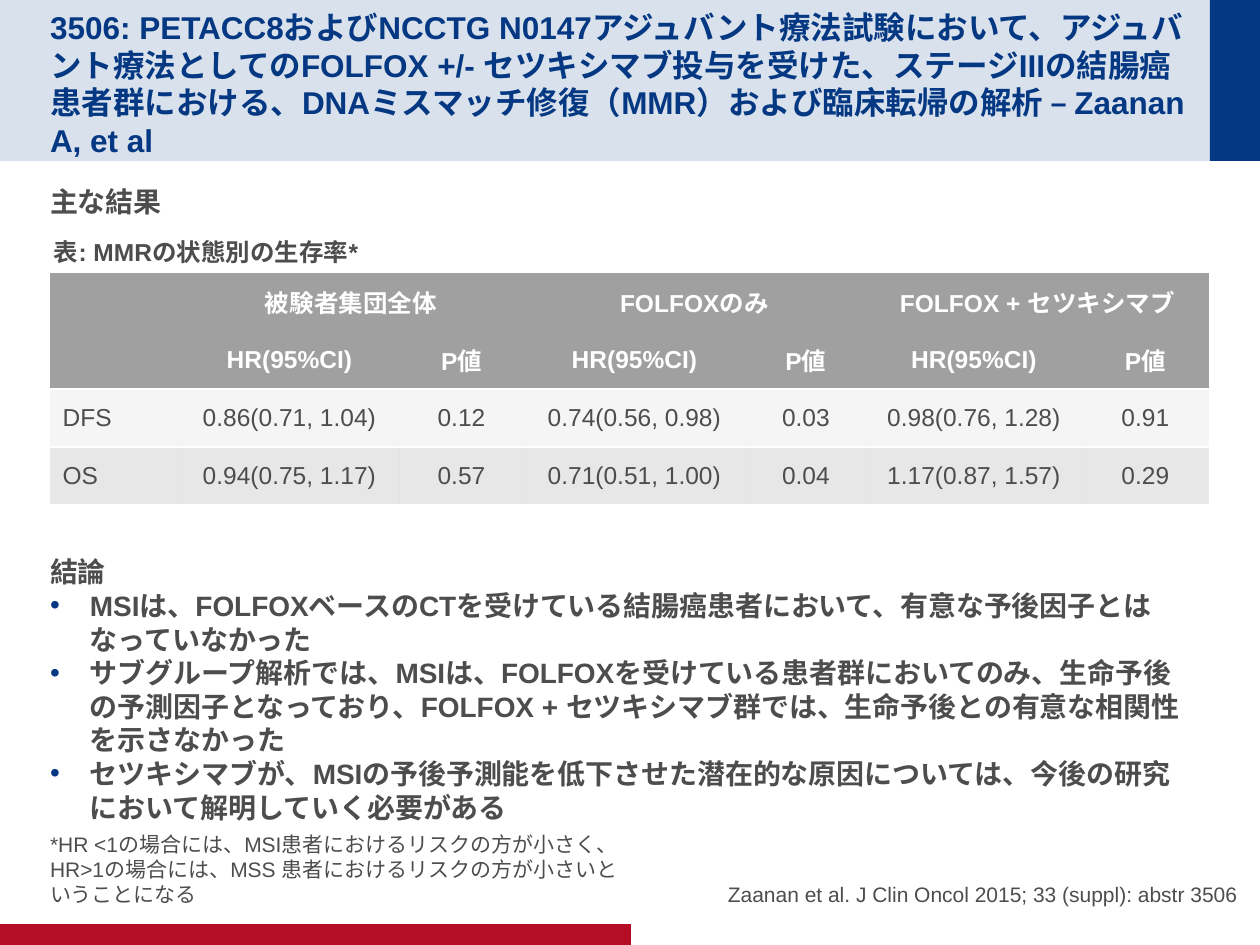
"""Build the MMR survival results slide with its table and conclusions."""
from dataclasses import dataclass

from lxml.etree import SubElement
from pptx import Presentation
from pptx.dml.color import RGBColor
from pptx.enum.shapes import MSO_SHAPE
from pptx.enum.text import MSO_ANCHOR, MSO_AUTO_SIZE, PP_ALIGN
from pptx.oxml import parse_xml
from pptx.oxml.ns import nsdecls, qn
from pptx.util import Pt


@dataclass(frozen=True)
class Theme:
    font: str = "Arial"
    navy: str = "043882"
    red: str = "B60D27"
    ink: str = "4D4D4D"
    grey: str = "A0A0A0"
    white: str = "FFFFFF"
    title: int = 18
    body: int = 16
    table: int = 14
    note: int = 12


THEME = Theme()
TITLE = (
    "3506: PETACC8およびNCCTG N0147アジュバント療法試験において、"
    "アジュバント療法としてのFOLFOX +/- セツキシマブ投与を受けた、"
    "ステージIIIの結腸癌患者群における、DNAミスマッチ修復（MMR）"
    "および臨床転帰の解析 – Zaanan A, et al"
)
RESULT = "主な結果"
CAPTION = "表: MMRの状態別の生存率*"
CLOSE = "結論"
POINTS = [
    "MSIは、FOLFOXベースのCTを受けている結腸癌患者において、有意な予後因子とはなっていなかった",
    "サブグループ解析では、MSIは、FOLFOXを受けている患者群においてのみ、生命予後の予測因子となっており、"
    "FOLFOX + セツキシマブ群では、生命予後との有意な相関性を示さなかった",
    "セツキシマブが、MSIの予後予測能を低下させた潜在的な原因については、今後の研究において解明していく必要がある",
]
NOTE = (
    "*HR <1の場合には、MSI患者におけるリスクの方が小さく、"
    "HR>1の場合には、MSS 患者におけるリスクの方が小さいということになる"
)
CITE = "Zaanan et al. J Clin Oncol 2015; 33 (suppl): abstr 3506"
GROUPS = ["被験者集団全体", "FOLFOXのみ", "FOLFOX + セツキシマブ"]
HEADS = ["HR(95%CI)", "P値"]
ROWS = [
    ("DFS", "0.86(0.71, 1.04)", "0.12", "0.74(0.56, 0.98)", "0.03", "0.98(0.76, 1.28)", "0.91"),
    ("OS", "0.94(0.75, 1.17)", "0.57", "0.71(0.51, 1.00)", "0.04", "1.17(0.87, 1.57)", "0.29"),
]
COLS = [129, 221, 123, 223, 120, 216, 127]
ROW = 58
SHADES = [100, 100, 10, 25]
BANDS = [
    ((0, 0, 1260, 161), THEME.navy, 15),
    ((1210, 0, 50, 161), THEME.navy, 100),
    ((0, 924, 631, 21), THEME.red, 100),
]
PLAIN = "{2D5ABB26-0587-4C30-8999-92F81FD0307C}"


def px(num):
    return round(num * 914400 / 126)


def paint(fill, node, color, alpha):
    fill.solid()
    fill.fore_color.rgb = RGBColor.from_string(color)
    if alpha < 100:
        tone = next(node.iter(qn("a:srgbClr")))
        SubElement(tone, qn("a:alpha"), val=str(alpha * 1000))


def style(para, size, color=THEME.ink, bold=False, align=PP_ALIGN.LEFT):
    para.alignment = align
    para.space_before = Pt(0)
    for run in para.runs:
        font = run.font
        font.name, font.size, font.bold = THEME.font, Pt(size), bold
        font.color.rgb = RGBColor.from_string(color)


def mark(para, on):
    props = para._p.get_or_add_pPr()
    inset = px(40) if on else 0
    props.set("marL", str(inset))
    props.set("indent", str(-inset))
    if on:
        tint = SubElement(props, qn("a:buClr"))
        SubElement(tint, qn("a:srgbClr"), val=THEME.navy)
        SubElement(props, qn("a:buFont"), typeface=THEME.font)
        SubElement(props, qn("a:buChar"), char="•")
    else:
        SubElement(props, qn("a:buNone"))


def place(shape, box, lines, anchor, **look):
    shape.left, shape.top, shape.width, shape.height = map(px, box)
    frame = shape.text_frame
    frame.text = "\n".join(lines)
    frame.word_wrap = True
    frame.auto_size = MSO_AUTO_SIZE.NONE
    frame.vertical_anchor = anchor
    frame.margin_left = frame.margin_right = 0
    frame.margin_top = frame.margin_bottom = 0
    for para in frame.paragraphs:
        style(para, **look)
        mark(para, para.text in POINTS)


def add_bands(slide):
    tree = slide.shapes.element
    for spot, (box, color, alpha) in enumerate(BANDS, 2):
        band = slide.shapes.add_shape(MSO_SHAPE.RECTANGLE, *map(px, box))
        band.shadow.inherit = False
        band.line.fill.background()
        paint(band.fill, band.element.spPr, color, alpha)
        tree.insert(spot, band.element)


def add_grid(slide):
    pairs = [text for group in GROUPS for text in (group, "")]
    data = [["", *pairs], ["", *HEADS * len(GROUPS)], *ROWS]
    frame = slide.shapes.add_table(
        len(data), len(COLS), px(50), px(273), px(sum(COLS)), px(ROW * len(data))
    )
    table = frame.table
    next(frame.element.iter(qn("a:tableStyleId"))).text = PLAIN
    for col, width in zip(table.columns, COLS):
        col.width = px(width)
    for r, line in enumerate(data):
        table.rows[r].height = px(ROW)
        head = r < 2
        for c, text in enumerate(line):
            cell = table.cell(r, c)
            cell.text = text
            cell.vertical_anchor = MSO_ANCHOR.MIDDLE
            style(
                cell.text_frame.paragraphs[0], THEME.table,
                THEME.white if head else THEME.ink, head,
                PP_ALIGN.CENTER if c else PP_ALIGN.LEFT,
            )
            props = cell._tc.get_or_add_tcPr()
            paint(cell.fill, props, THEME.grey, SHADES[r])
            if r:
                props.insert(0, parse_xml(
                    f'<a:lnB {nsdecls("a")} w="12700"><a:solidFill>'
                    f'<a:srgbClr val="{THEME.white}"/></a:solidFill></a:lnB>'
                ))
    for c in range(1, len(COLS), 2):
        table.cell(0, c).merge(table.cell(0, c + 1))


def main():
    deck = Presentation()
    deck.slide_width, deck.slide_height = px(1260), px(945)
    slide = deck.slides.add_slide(deck.slide_layouts[4])
    title, note, points, cite, result = slide.placeholders
    top, mid, low = MSO_ANCHOR.TOP, MSO_ANCHOR.MIDDLE, MSO_ANCHOR.BOTTOM
    bold = {"size": THEME.body, "bold": True}
    place(title, (50, 31, 1135, 105), [TITLE], mid,
          size=THEME.title, color=THEME.navy, bold=True)
    place(result, (50, 185, 1145, 34), [RESULT], top, **bold)
    place(points, (50, 555, 1145, 270), [CLOSE, *POINTS], top, **bold)
    place(note, (50, 872, 570, 35), [NOTE], low, size=THEME.note)
    place(cite, (640, 840, 598, 67), [CITE], low,
          size=THEME.note, align=PP_ALIGN.RIGHT)
    add_bands(slide)
    add_grid(slide)
    label = slide.shapes.add_textbox(0, 0, 0, 0)
    place(label, (54, 237, 494, 30), [CAPTION], top, size=THEME.table, bold=True)
    deck.save("out.pptx")


if __name__ == "__main__":
    main()
